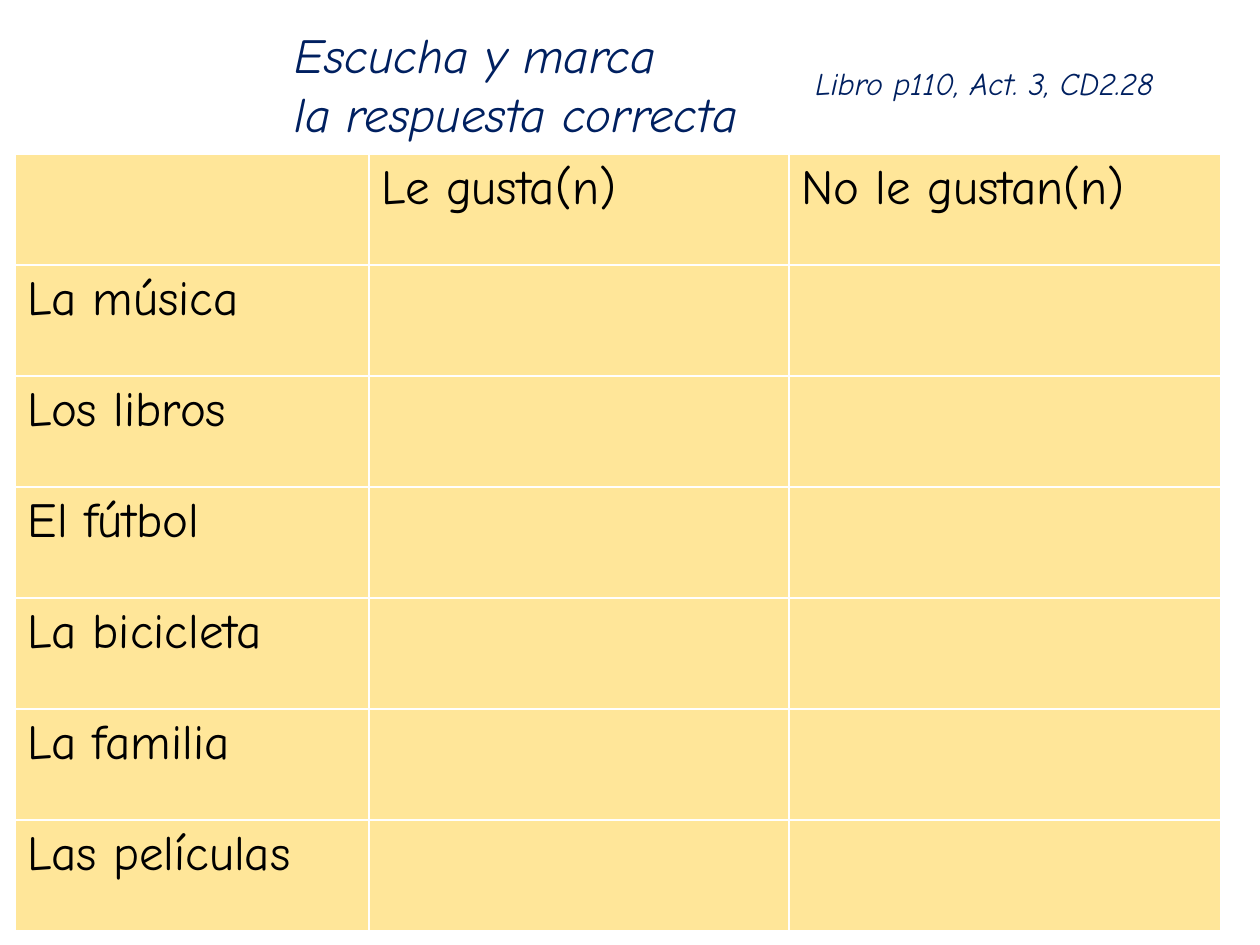
from pptx import Presentation
from pptx.dml.color import RGBColor
from pptx.enum.text import MSO_ANCHOR as Anchor, MSO_AUTO_SIZE as AutoSize, PP_ALIGN as Align
from pptx.util import Emu, Pt


def px(length):
    return Emu(round(length * 914400 / 126))


def write(frame, text, color, **font_format):
    frame.text = text
    for paragraph in frame.paragraphs:
        paragraph.alignment = Align.LEFT
        paragraph.line_spacing = 1.0
        paragraph.font.color.rgb = RGBColor.from_string(color)
        for run in paragraph.runs:
            run.font.color.rgb = RGBColor.from_string(color)
            for attribute, value in font_format.items():
                setattr(run.font, attribute, value)


FONT = "Comic Neue"
NAVY = "002060"
BLACK = "000000"
SAND = "FFE699"

deck = Presentation()
deck.slide_width, deck.slide_height = px(1260), px(945)
slide = deck.slides.add_slide(deck.slide_layouts[5])

instruction = slide.shapes.title
place = {"left": px(282), "top": px(18), "width": px(937), "height": px(131)}
for attribute, value in place.items():
    setattr(instruction, attribute, value)
frame_format = {"vertical_anchor": Anchor.TOP, "word_wrap": True, "auto_size": AutoSize.NONE}
for attribute, value in frame_format.items():
    setattr(instruction.text_frame, attribute, value)
write(instruction.text_frame, "Escucha y marca\nla respuesta correcta", NAVY,
      name=FONT, size=Pt(28), italic=True)

topics = ["La música", "Los libros", "El fútbol", "La bicicleta", "La familia", "Las películas"]
answers = [["", "Le gusta(n)", "No le gustan(n)"]] + [[topic, "", ""] for topic in topics]
column_widths = [354, 420, 432]
row_height = 111

grid = slide.shapes.add_table(len(answers), len(column_widths), px(15), px(154),
                              px(sum(column_widths)), px(row_height * len(answers))).table
grid.horz_banding = False
for column, width in zip(grid.columns, column_widths):
    column.width = px(width)
for row, labels in zip(grid.rows, answers):
    row.height = px(row_height)
    for cell, label in zip(row.cells, labels):
        cell.fill.solid()
        cell.fill.fore_color.rgb = RGBColor.from_string(SAND)
        if label:
            write(cell.text_frame, label, BLACK, name=FONT, size=Pt(28), bold=False)

reference = slide.shapes.add_textbox(px(803), px(58), px(413), px(50)).text_frame
reference.word_wrap = False
reference.auto_size = AutoSize.SHAPE_TO_FIT_TEXT
write(reference, "Libro p110, Act. 3, CD2.28", NAVY, name=FONT, size=Pt(18), italic=True)

deck.save("out.pptx")
